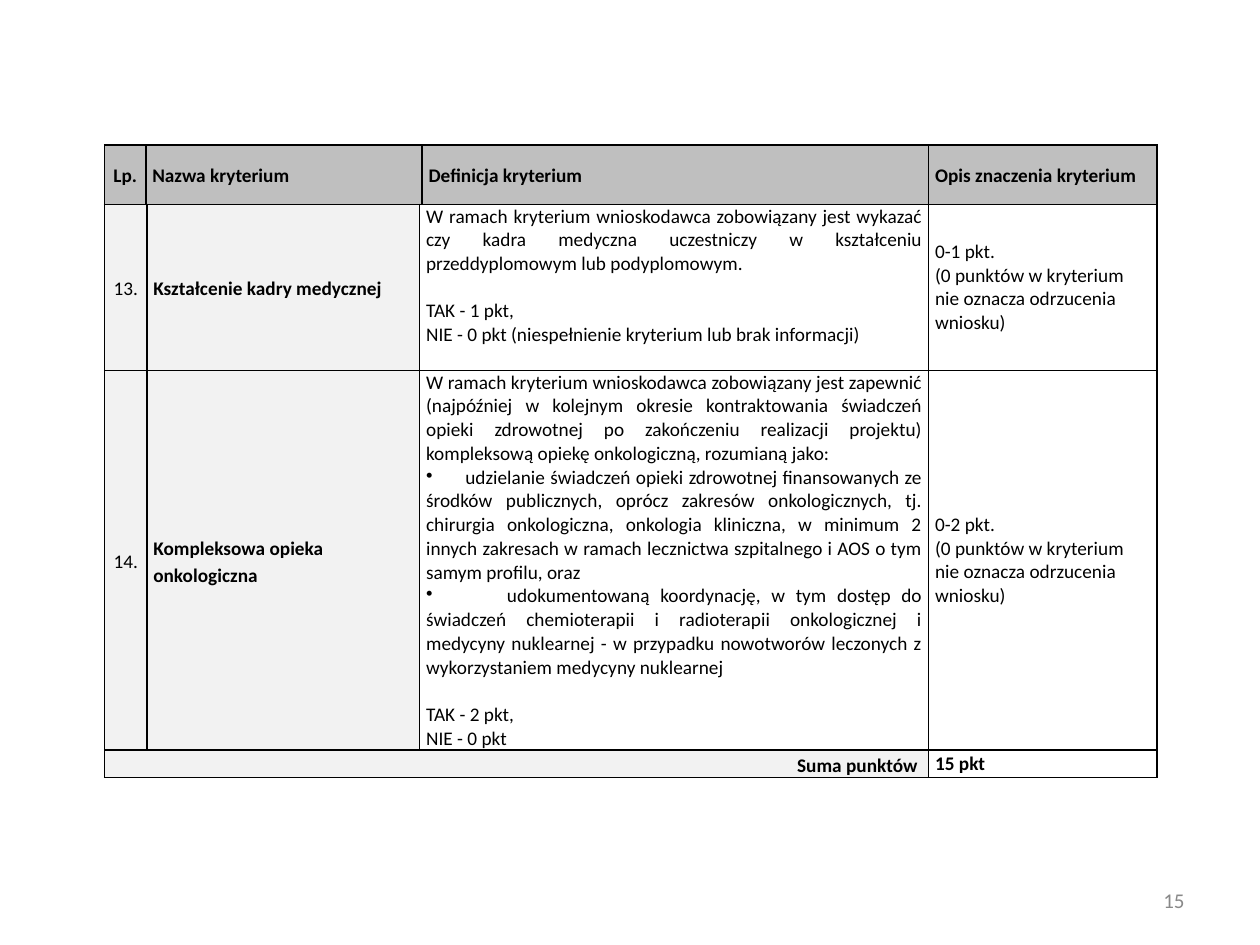
from dataclasses import dataclass

from lxml import etree
from pptx import Presentation
from pptx import util as u
from pptx.dml.color import RGBColor
from pptx.enum import text
from pptx.oxml import ns

LEFT, CENTER, RIGHT, JUSTIFY = (
    text.PP_ALIGN.LEFT, text.PP_ALIGN.CENTER, text.PP_ALIGN.RIGHT, text.PP_ALIGN.JUSTIFY)
LINE_POINTS = 13.4  # height of one 11 pt line


def color(value):
    return RGBColor.from_string(value)


def add_element(parent, tag, **attributes):
    return etree.SubElement(parent, ns.qn(tag), attributes)


@dataclass
class Line:
    """One paragraph of a cell; bullet_tab is the gap in cm after its bullet."""
    words: str
    align: object = LEFT
    bold: bool = False
    spaced: bool = False
    gap_before: bool = False
    bullet_tab: float = 0


@dataclass
class Cell:
    lines: list
    fill: str = ""
    bottom: float = 0


def label(words, fill="F2F2F2", align=LEFT, bold=True):
    return Cell([Line(words, align, bold, spaced=True)], fill)


def score(points):
    return Cell([Line(points), Line("(0 punktów w kryterium"),
                 Line("nie oznacza odrzucenia wniosku)")])


class CriteriaSlide:
    font_name = "Calibri"
    text_color = "000000"
    border_color = "000000"
    font_size = 11
    side_margin = 0.13

    def __init__(self, slide):
        self.slide = slide

    def format_font(self, paragraph, size, font_color, bold=False):
        paragraph.font.name = self.font_name
        paragraph.font.size = u.Pt(size)
        paragraph.font.bold = bold
        paragraph.font.color.rgb = color(font_color)

    def add_number(self, number, left, top, width, height):
        shape = self.slide.shapes.add_textbox(u.Cm(left), u.Cm(top), u.Cm(width), u.Cm(height))
        frame = shape.text_frame
        frame.word_wrap = True
        frame.vertical_anchor = text.MSO_ANCHOR.MIDDLE
        paragraph = frame.paragraphs[0]
        paragraph.text = number
        paragraph.alignment = RIGHT
        self.format_font(paragraph, 12, "898989")

    def add_table(self, left, top, widths, heights, rows):
        shape = self.slide.shapes.add_table(
            len(heights), len(widths), u.Cm(left), u.Cm(top),
            u.Cm(sum(widths)), u.Cm(sum(heights)))
        table = shape.table
        table.first_row = table.horz_banding = False
        for column, width in zip(table.columns, widths):
            column.width = u.Cm(width)
        for row, height in zip(table.rows, heights):
            row.height = u.Cm(height)
        for row_index, row in enumerate(rows):
            for column_index, content in enumerate(row):
                self.fill_cell(table.cell(row_index, column_index), content)
        return table

    def fill_cell(self, cell, content):
        cell.margin_left = cell.margin_right = u.Cm(self.side_margin)
        cell.margin_top, cell.margin_bottom = 0, u.Cm(content.bottom)
        cell.vertical_anchor = text.MSO_ANCHOR.MIDDLE
        self.draw_borders(cell)
        if content.fill:
            cell.fill.solid()
            cell.fill.fore_color.rgb = color(content.fill)
        else:
            cell.fill.background()
        frame = cell.text_frame
        for index, line in enumerate(content.lines):
            paragraph = frame.add_paragraph() if index else frame.paragraphs[0]
            self.write_line(paragraph, line)

    def draw_borders(self, cell):
        properties = cell._tc.get_or_add_tcPr()
        for side in ("a:lnL", "a:lnR", "a:lnT", "a:lnB"):
            border = add_element(properties, side, w=str(u.Pt(1)))
            fill = add_element(border, "a:solidFill")
            add_element(fill, "a:srgbClr", val=self.border_color)

    def write_line(self, paragraph, line):
        paragraph.text = line.words
        paragraph.alignment = line.align
        if line.spaced:
            paragraph.line_spacing = 1.15
            paragraph.space_after = u.Pt(10)
        if line.gap_before:
            paragraph.space_before = u.Pt(LINE_POINTS)
        if line.bullet_tab:
            paragraph.text = "\t" + line.words
            properties = paragraph._p.get_or_add_pPr()
            properties.set("marL", "0")
            properties.set("indent", "0")
            add_element(properties, "a:buChar", char="•")
            tabs = add_element(properties, "a:tabLst")
            add_element(tabs, "a:tab", pos=str(u.Cm(line.bullet_tab)), algn="l")
        self.format_font(paragraph, self.font_size, self.text_color, line.bold)


TRAINING = Cell([
    Line("W ramach kryterium wnioskodawca zobowiązany jest wykazać czy kadra medyczna "
         "uczestniczy w kształceniu przeddyplomowym lub podyplomowym.", JUSTIFY),
    Line("TAK - 1 pkt,", JUSTIFY, gap_before=True),
    Line("NIE - 0 pkt (niespełnienie kryterium lub brak informacji)", JUSTIFY),
], bottom=0.47)

ONCOLOGY = Cell([
    Line("W ramach kryterium wnioskodawca zobowiązany jest zapewnić (najpóźniej w kolejnym "
         "okresie kontraktowania świadczeń opieki zdrowotnej po zakończeniu realizacji "
         "projektu) kompleksową opiekę onkologiczną, rozumianą jako:", JUSTIFY),
    Line("udzielanie świadczeń opieki zdrowotnej finansowanych ze środków publicznych, oprócz "
         "zakresów onkologicznych, tj. chirurgia onkologiczna, onkologia kliniczna, w minimum "
         "2 innych zakresach w ramach lecznictwa szpitalnego i AOS o tym samym profilu, oraz",
         JUSTIFY, bullet_tab=0.79),
    Line("udokumentowaną koordynację, w tym dostęp do świadczeń chemioterapii i radioterapii "
         "onkologicznej i medycyny nuklearnej - w przypadku nowotworów leczonych z "
         "wykorzystaniem medycyny nuklearnej", JUSTIFY, bullet_tab=1.63),
    Line("TAK - 2 pkt,", gap_before=True),
    Line("NIE - 0 pkt"),
])


def main():
    presentation = Presentation()
    presentation.slide_width, presentation.slide_height = u.Cm(25.4), u.Cm(19.05)
    blank_layout = presentation.slide_layouts[6]
    page = CriteriaSlide(presentation.slides.add_slide(blank_layout))

    page.add_number("15", 18.2, 17.65, 5.93, 1.01)
    gray = "BFBFBF"
    page.add_table(2.11, 2.92, [0.83, 5.57, 10.21, 4.6], [1.2], [[
        label("Lp.", gray, CENTER), label("Nazwa kryterium", gray),
        label("Definicja kryterium", gray), label("Opis znaczenia kryterium", gray)]])
    no_text = Cell([], "F2F2F2")
    criteria = page.add_table(2.11, 4.12, [0.85, 5.5, 10.26, 4.6], [3.35, 7.65, 0.55], [
        [label("13.", align=CENTER, bold=False), label("Kształcenie kadry medycznej"),
         TRAINING, score("0-1 pkt.")],
        [label("14.", align=CENTER, bold=False), label("Kompleksowa opieka onkologiczna"),
         ONCOLOGY, score("0-2 pkt.")],
        [label("Suma punktów", align=RIGHT), no_text, no_text,
         Cell([Line("15 pkt", bold=True)])]])
    total = criteria.cell(2, 0)
    total.merge(criteria.cell(2, 2))
    total.margin_right = u.Cm(0.22)
    presentation.save("out.pptx")


if __name__ == "__main__":
    main()
